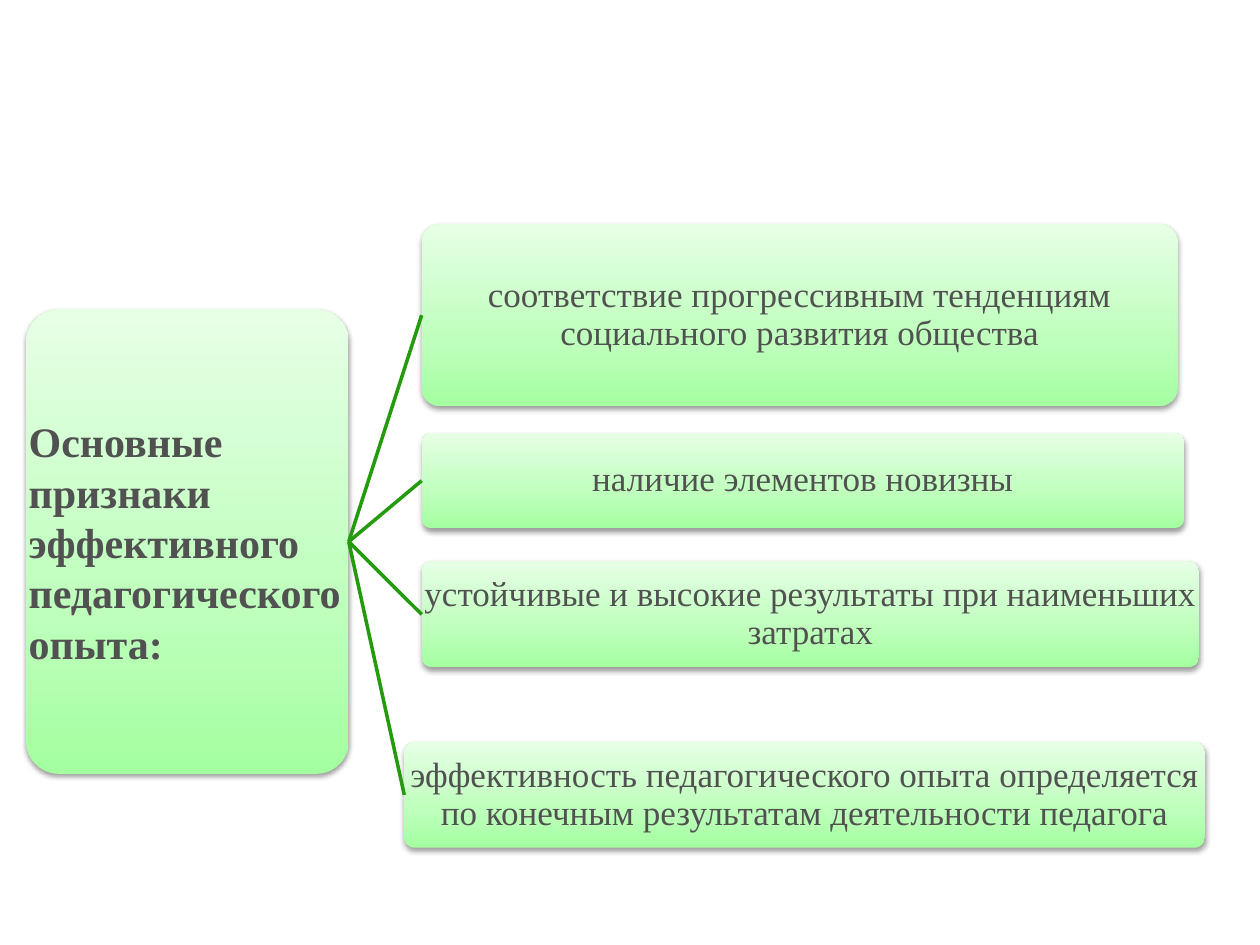
from copy import deepcopy

from lxml import etree
from pptx import Presentation
from pptx.dml.color import RGBColor
from pptx.enum.shapes import MSO_CONNECTOR as Link, MSO_SHAPE as Shape
from pptx.enum.text import MSO_ANCHOR as Anchor, PP_ALIGN as Align
from pptx.oxml.ns import qn
from pptx.util import Cm, Pt

COLORS = {"text": "515151", "line": "249A0D", "shadow": "000000"}
GRADIENT = [(0, "A4FFA0"), (0.35, "BEFFBC"), (1, "E6FFE5")]
FONT = "Times New Roman"

ROOT = "Основные признаки эффективного педагогического опыта:"
ROOT_PLACE = (0.53, 6.24, 6.5, 9.36)
# left, top, width, height in cm
SIGNS = [
    ("соответствие прогрессивным тенденциям социального развития общества",
     (8.5, 4.52, 15.24, 3.67)),
    ("наличие элементов новизны", (8.5, 8.73, 15.37, 1.92)),
    ("устойчивые и высокие результаты при наименьших затратах",
     (8.5, 11.32, 15.67, 2.13)),
    ("эффективность педагогического опыта определяется "
     "по конечным результатам деятельности педагога",
     (8.15, 14.96, 16.14, 2.13)),
]


def add_card(page, place):
    """Add a rounded green card with a soft shadow."""
    box = page.shapes.add_shape(Shape.ROUNDED_RECTANGLE, *map(Cm, place))
    box.adjustments[0] = 0.1
    box.line.fill.background()

    box.fill.gradient()
    box.fill.gradient_angle = 90
    stop_list = box.element.spPr.find(".//" + qn("a:gsLst"))
    stop_list.append(deepcopy(stop_list[-1]))
    for stop, (position, color) in zip(box.fill.gradient_stops, GRADIENT):
        stop.position = position
        stop.color.rgb = RGBColor.from_string(color)

    box.shadow.inherit = False
    effects = box.element.spPr.find(qn("a:effectLst"))
    shadow = etree.SubElement(effects, qn("a:outerShdw"), blurRad=str(Pt(3.1)),
                              dist=str(Pt(1.6)), dir="5400000", rotWithShape="0")
    tint = etree.SubElement(shadow, qn("a:srgbClr"), val=COLORS["shadow"])
    etree.SubElement(tint, qn("a:alpha"), val="38000")
    return box


def add_label(page, text, place, size, inset):
    """Lay text over a whole card, free of its rounded-corner inset."""
    frame = page.shapes.add_textbox(*map(Cm, place)).text_frame
    frame.word_wrap = True
    frame.vertical_anchor = Anchor.MIDDLE
    frame.margin_left = frame.margin_right = Cm(inset)
    frame.margin_top = frame.margin_bottom = Cm(inset)
    para = frame.paragraphs[0]
    span = para.add_run()
    span.text = text
    span.font.name = FONT
    span.font.size = Pt(size)
    span.font.color.rgb = RGBColor.from_string(COLORS["text"])
    return para


deck = Presentation()
deck.slide_width, deck.slide_height = Cm(25.4), Cm(19.05)
page = deck.slides.add_slide(deck.slide_layouts[6])

root = add_card(page, ROOT_PLACE)
title = add_label(page, ROOT, ROOT_PLACE, 24, 0.05)
title.alignment = Align.LEFT
title.runs[0].font.bold = True

for text, place in SIGNS:
    card = add_card(page, place)
    para = add_label(page, text, place, 20, 0.03)
    para.alignment = Align.CENTER
    para.line_spacing = 0.9

    branch = page.shapes.add_connector(Link.STRAIGHT, 0, 0, 0, 0)
    branch.begin_connect(root, 3)
    branch.end_connect(card, 1)
    branch.line.width = Pt(2)
    branch.line.color.rgb = RGBColor.from_string(COLORS["line"])
    etree.SubElement(branch.element.spPr, qn("a:effectLst"))

deck.save("out.pptx")
